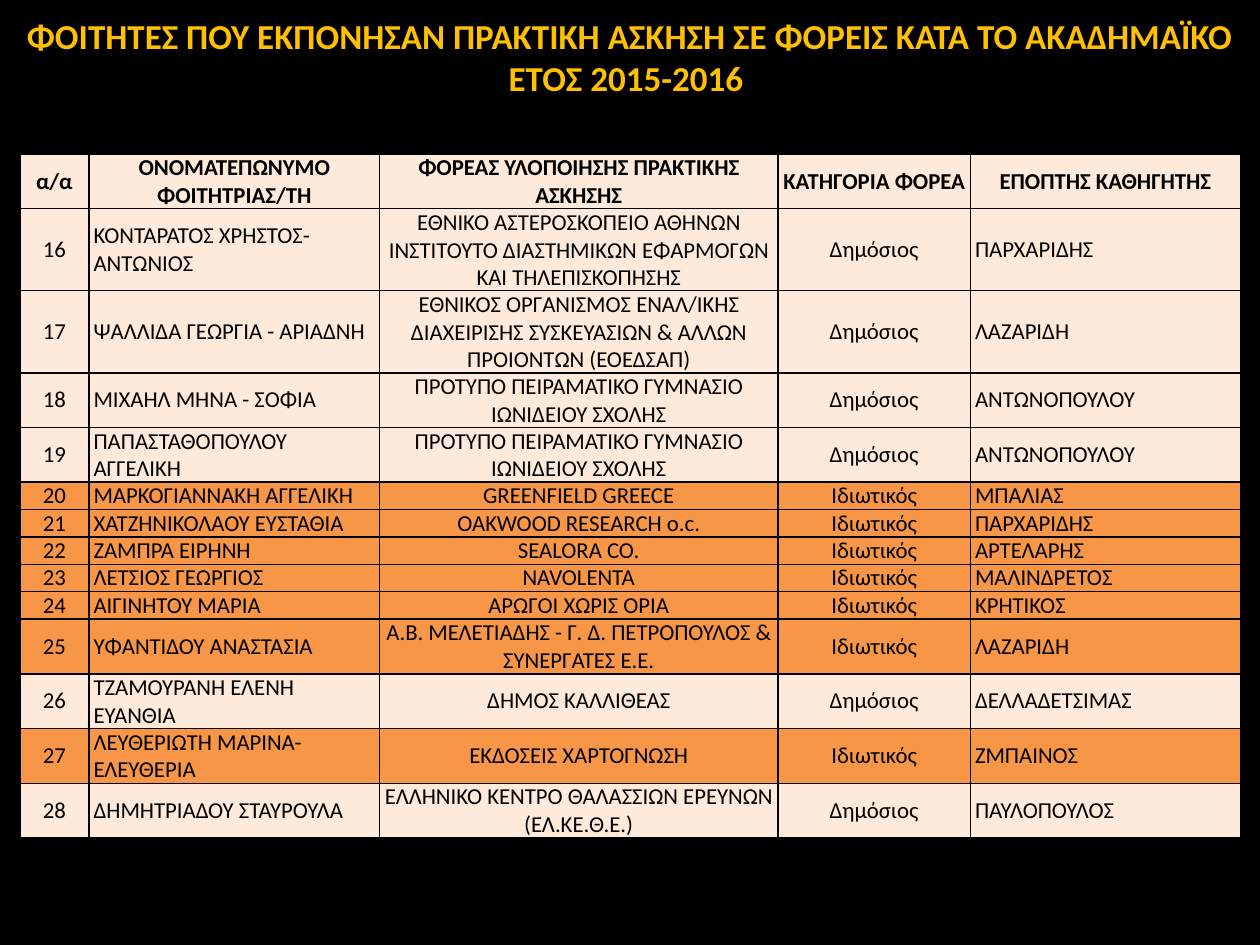
from lxml.etree import SubElement
from pptx import Presentation
from pptx.dml.color import RGBColor
from pptx.enum.text import MSO_ANCHOR, PP_ALIGN
from pptx.oxml.ns import qn
from pptx.util import Pt

COLORS = {
    "back": "000000",
    "title": "FFC000",
    "ink": "000000",
    "public": "FDEADA",
    "private": "F79646",
}
TITLE = ("ΦΟΙΤΗΤΕΣ ΠΟΥ ΕΚΠΟΝΗΣΑΝ ΠΡΑΚΤΙΚΗ ΑΣΚΗΣΗ ΣΕ ΦΟΡΕΙΣ "
         "ΚΑΤΑ ΤΟ ΑΚΑΔΗΜΑΪΚΟ ΕΤΟΣ 2015-2016 ")
HEADS = ["α/α", "ΟΝΟΜΑΤΕΠΩΝΥΜΟ ΦΟΙΤΗΤΡΙΑΣ/ΤΗ",
         "ΦΟΡΕΑΣ ΥΛΟΠΟΙΗΣΗΣ ΠΡΑΚΤΙΚΗΣ ΑΣΚΗΣΗΣ",
         "ΚΑΤΗΓΟΡΙΑ ΦΟΡΕΑ", "ΕΠΟΠΤΗΣ ΚΑΘΗΓΗΤΗΣ"]
PUBLIC, PRIVATE = "Δημόσιος", "Ιδιωτικός"
SCHOOL = "ΠΡΟΤΥΠΟ ΠΕΙΡΑΜΑΤΙΚΟ ΓΥΜΝΑΣΙΟ ΙΩΝΙΔΕΙΟΥ ΣΧΟΛΗΣ"
FIRST = 16  # number of the first student
# lines of text, student, host, category, supervisor
STUDENTS = [
    (3, "ΚΟΝΤΑΡΑΤΟΣ ΧΡΗΣΤΟΣ-ΑΝΤΩΝΙΟΣ",
     "ΕΘΝΙΚΟ ΑΣΤΕΡΟΣΚΟΠΕΙΟ ΑΘΗΝΩΝ ΙΝΣΤΙΤΟΥΤΟ ΔΙΑΣΤΗΜΙΚΩΝ ΕΦΑΡΜΟΓΩΝ "
     "ΚΑΙ ΤΗΛΕΠΙΣΚΟΠΗΣΗΣ", PUBLIC, "ΠΑΡΧΑΡΙΔΗΣ"),
    (3, "ΨΑΛΛΙΔΑ ΓΕΩΡΓΙΑ - ΑΡΙΑΔΝΗ",
     "ΕΘΝΙΚΟΣ ΟΡΓΑΝΙΣΜΟΣ ΕΝΑΛ/ΙΚΗΣ ΔΙΑΧΕΙΡΙΣΗΣ ΣΥΣΚΕΥΑΣΙΩΝ & ΑΛΛΩΝ "
     "ΠΡΟΙΟΝΤΩΝ (ΕΟΕΔΣΑΠ)", PUBLIC, "ΛΑΖΑΡΙΔΗ"),
    (2, "ΜΙΧΑΗΛ ΜΗΝΑ - ΣΟΦΙΑ", SCHOOL, PUBLIC, "ΑΝΤΩΝΟΠΟΥΛΟΥ"),
    (2, "ΠΑΠΑΣΤΑΘΟΠΟΥΛΟΥ ΑΓΓΕΛΙΚΗ", SCHOOL, PUBLIC, "ΑΝΤΩΝΟΠΟΥΛΟΥ"),
    (1, "ΜΑΡΚΟΓΙΑΝΝΑΚΗ ΑΓΓΕΛΙΚΗ", "GREENFIELD GREECE", PRIVATE, "ΜΠΑΛΙΑΣ"),
    (1, "ΧΑΤΖΗΝΙΚΟΛΑΟΥ ΕΥΣΤΑΘΙΑ", "OAKWOOD RESEARCH o.c.", PRIVATE,
     "ΠΑΡΧΑΡΙΔΗΣ"),
    (1, "ΖΑΜΠΡΑ ΕΙΡΗΝΗ", "SEALORA CO.", PRIVATE, "ΑΡΤΕΛΑΡΗΣ"),
    (1, "ΛΕΤΣΙΟΣ ΓΕΩΡΓΙΟΣ", "NAVOLENTA", PRIVATE, "ΜΑΛΙΝΔΡΕΤΟΣ"),
    (1, "ΑΙΓΙΝΗΤΟΥ ΜΑΡΙΑ", "ΑΡΩΓΟΙ ΧΩΡΙΣ ΟΡΙΑ", PRIVATE, "ΚΡΗΤΙΚΟΣ"),
    (2, "ΥΦΑΝΤΙΔΟΥ ΑΝΑΣΤΑΣΙΑ",
     "Α.Β. ΜΕΛΕΤΙΑΔΗΣ - Γ. Δ. ΠΕΤΡΟΠΟΥΛΟΣ & ΣΥΝΕΡΓΑΤΕΣ Ε.Ε.", PRIVATE,
     "ΛΑΖΑΡΙΔΗ"),
    (2, "ΤΖΑΜΟΥΡΑΝΗ ΕΛΕΝΗ ΕΥΑΝΘΙΑ", "ΔΗΜΟΣ ΚΑΛΛΙΘΕΑΣ", PUBLIC,
     "ΔΕΛΛΑΔΕΤΣΙΜΑΣ"),
    (2, "ΛΕΥΘΕΡΙΩΤΗ ΜΑΡΙΝΑ-ΕΛΕΥΘΕΡΙΑ", "ΕΚΔΟΣΕΙΣ ΧΑΡΤΟΓΝΩΣΗ", PRIVATE,
     "ΖΜΠΑΙΝΟΣ"),
    (2, "ΔΗΜΗΤΡΙΑΔΟΥ ΣΤΑΥΡΟΥΛΑ",
     "ΕΛΛΗΝΙΚΟ ΚΕΝΤΡΟ ΘΑΛΑΣΣΙΩΝ ΕΡΕΥΝΩΝ (ΕΛ.ΚΕ.Θ.Ε.)", PUBLIC,
     "ΠΑΥΛΟΠΟΥΛΟΣ"),
]
WIDTHS = [39.5, 166, 227.7, 110, 154.3]
NAMES = (1, 4)  # left-aligned columns


def rgb(name):
    return RGBColor.from_string(COLORS[name])


def write(frame, text, size=13, color="ink", bold=False,
          align=PP_ALIGN.CENTER):
    frame.word_wrap = True
    par = frame.paragraphs[0]
    par.alignment = align
    run = par.add_run()
    run.text = text
    font = run.font
    font.name, font.size, font.bold = "Calibri", Pt(size), bold
    font.color.rgb = rgb(color)


def edge(cell, width=1):
    """Draw the four borders of a cell, ahead of its fill."""
    props = cell._tc.get_or_add_tcPr()
    for spot, side in enumerate(("a:lnL", "a:lnR", "a:lnT", "a:lnB")):
        line = SubElement(props, qn(side), w=str(Pt(width)))
        fill = SubElement(line, qn("a:solidFill"))
        SubElement(fill, qn("a:srgbClr"), val=COLORS["ink"])
        props.insert(spot, line)


def add_title(slide, left, top, width, height):
    box = slide.shapes.add_textbox(Pt(left), Pt(top), Pt(width), Pt(height))
    write(box.text_frame, TITLE, size=20, color="title", bold=True)


def add_list(slide, left, top, width, height):
    rows = [(2, *HEADS)]
    rows += [(lines, str(num), *rest)
             for num, (lines, *rest) in enumerate(STUDENTS, FIRST)]
    step = height / sum(row[0] for row in rows)
    table = slide.shapes.add_table(len(rows), len(WIDTHS), Pt(left), Pt(top),
                                   Pt(width), Pt(height)).table
    for col, size in zip(table.columns, WIDTHS):
        col.width = Pt(size)
    for r, (lines, *texts) in enumerate(rows):
        table.rows[r].height = Pt(lines * step)
        shade = "private" if PRIVATE in texts else "public"
        for c, text in enumerate(texts):
            cell = table.cell(r, c)
            cell.margin_left = cell.margin_right = Pt(2.7)
            cell.margin_top = cell.margin_bottom = 0
            cell.vertical_anchor = MSO_ANCHOR.MIDDLE
            cell.fill.solid()
            cell.fill.fore_color.rgb = rgb(shade)
            edge(cell)
            left_side = r > 0 and c in NAMES
            write(cell.text_frame, text, bold=r == 0,
                  align=PP_ALIGN.LEFT if left_side else PP_ALIGN.CENTER)


def main():
    deck = Presentation()
    deck.slide_width, deck.slide_height = Pt(720), Pt(540)
    slide = deck.slides.add_slide(deck.slide_layouts[6])
    back = slide.background.fill
    back.solid()
    back.fore_color.rgb = rgb("back")
    add_title(slide, 0, 4.5, 720, 39)
    add_list(slide, 11.3, 88, sum(WIDTHS), 390.5)
    deck.save("out.pptx")


if __name__ == "__main__":
    main()
